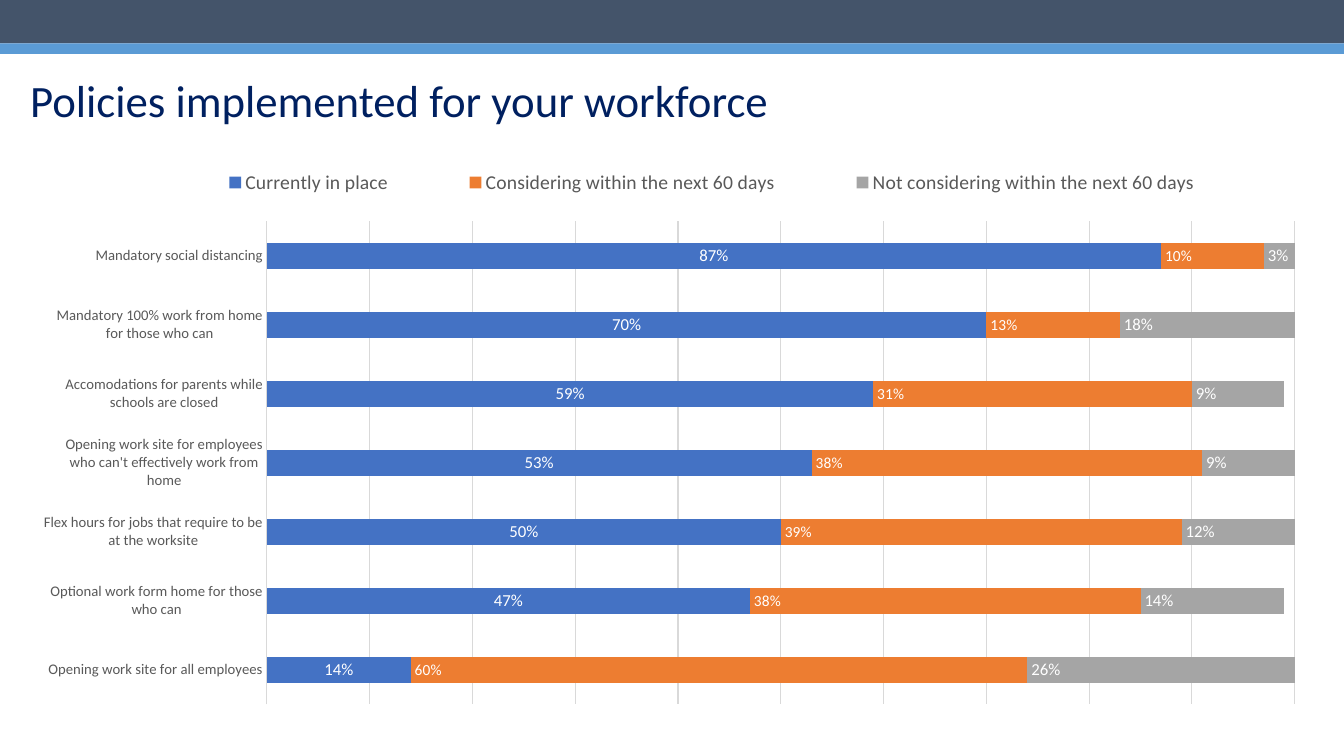
from lxml import etree
from pptx import Presentation
from pptx import util as u
from pptx.chart.data import CategoryChartData
from pptx.dml.color import RGBColor
from pptx.enum import chart as ch, shapes, text
from pptx.oxml import ns

Pt = u.Pt

# Content
WIDTH, HEIGHT = 960, 540
TITLE = "Policies implemented for your workforce"
BANDS = [(0, 31, "44546A"), (31, 7.5, "5B9BD5")]  # top, height, colour
POLICIES = [
    "Opening work site for all employees",
    "Optional work form home for those who can",
    "Flex hours for jobs that require to be at the worksite",
    "Opening work site for employees who can't effectively work from home",
    "Accomodations for parents while schools are closed",
    "Mandatory 100% work from home for those who can",
    "Mandatory social distancing",
]
POS = ch.XL_LABEL_POSITION
# name, values, colour, label position, label size
ANSWERS = [
    ("Currently in place", (0.14, 0.47, 0.5, 0.53, 0.59, 0.7, 0.87),
     "4472C4", POS.CENTER, 12),
    ("Considering within the next 60 days", (0.6, 0.38, 0.39, 0.38, 0.31, 0.13, 0.1),
     "ED7D31", POS.INSIDE_BASE, 11),
    ("Not considering within the next 60 days", (0.26, 0.14, 0.12, 0.09, 0.09, 0.18, 0.03),
     "A5A5A5", POS.INSIDE_BASE, 12),
]
PLOT_AREA = (0.18, 0.11, 0.82, 0.87)  # x, y, w, h as shares of the chart
LEGEND_AREA = (0.09, 0.0, 0.89, 0.08)


def rgb(value):
    return RGBColor.from_string(value)


def set_font(font, size, color):
    font.name, font.size, font.bold = "Calibri", Pt(size), False
    font.color.rgb = rgb(color)


def set_line(line):
    line.color.rgb = rgb("D9D9D9")
    line.width = Pt(0.75)


def place(parent, after, area, inner=False):
    """Give a chart part a manual layout, put right after the given element."""
    for old in parent.findall(ns.qn("c:layout")):
        parent.remove(old)
    layout = etree.Element(ns.qn("c:layout"))
    manual = etree.SubElement(layout, ns.qn("c:manualLayout"))
    values = [("layoutTarget", "inner")] if inner else []
    values += [("xMode", "edge"), ("yMode", "edge")]
    values += list(zip("xywh", area))
    for tag, value in values:
        etree.SubElement(manual, ns.qn("c:" + tag)).set("val", str(value))
    if after is None:
        parent.insert(0, layout)
    else:
        after.addnext(layout)


prs = Presentation()
prs.slide_width, prs.slide_height = Pt(WIDTH), Pt(HEIGHT)
s = prs.slides.add_slide(prs.slide_layouts[6])

# Header bands
for top, height, color in BANDS:
    sp = s.shapes.add_shape(shapes.MSO_SHAPE.RECTANGLE, 0, Pt(top), Pt(WIDTH), Pt(height))
    sp.shadow.inherit = False
    sp.fill.solid()
    sp.fill.fore_color.rgb = rgb(color)
    sp.line.fill.background()

# Title
tf = s.shapes.add_textbox(Pt(14.4), Pt(21.6), Pt(940), Pt(104.4)).text_frame
tf.word_wrap = True
tf.vertical_anchor = text.MSO_ANCHOR.MIDDLE
tf.text = TITLE
p = tf.paragraphs[0]
p.line_spacing = 0.9
set_font(p.runs[0].font, 32, "002060")

# Chart
data = CategoryChartData(number_format="0%")
data.categories = POLICIES
for name, values, *_ in ANSWERS:
    data.add_series(name, values)
chart = s.shapes.add_chart(ch.XL_CHART_TYPE.BAR_STACKED, Pt(29.5), Pt(114.5),
                           Pt(895.7), Pt(396.7), data).chart
chart.has_title = False
set_font(chart.font, 10, "000000")
plot = chart.plots[0]
plot.gap_width, plot.overlap = 170, 100
plot.vary_by_categories = False

# Bars and their labels
for series, (_, _, color, position, size) in zip(plot.series, ANSWERS):
    series.format.fill.solid()
    series.format.fill.fore_color.rgb = rgb(color)
    labels = series.data_labels
    labels.show_value = True
    labels.position = position
    labels.number_format, labels.number_format_is_linked = "0%", False
    set_font(labels.font, size, "FFFFFF")

# Axes
policy_axis, share_axis = chart.category_axis, chart.value_axis
policy_axis.major_tick_mark = policy_axis.minor_tick_mark = ch.XL_TICK_MARK.NONE
set_font(policy_axis.tick_labels.font, 10.5, "595959")
set_line(policy_axis.format.line)
share_axis.visible = False
share_axis.minimum_scale, share_axis.maximum_scale = 0, 1
share_axis.major_unit = 0.1
share_axis.has_major_gridlines = True
set_line(share_axis.major_gridlines.format.line)

# Legend and placing
chart.has_legend = True
legend = chart.legend
legend.position = ch.XL_LEGEND_POSITION.TOP
legend.include_in_layout = True
set_font(legend.font, 14, "595959")
box = legend._element
place(box, box.find(ns.qn("c:legendPos")), LEGEND_AREA)
place(chart._chartSpace.chart.plotArea, None, PLOT_AREA, inner=True)

prs.save("out.pptx")
